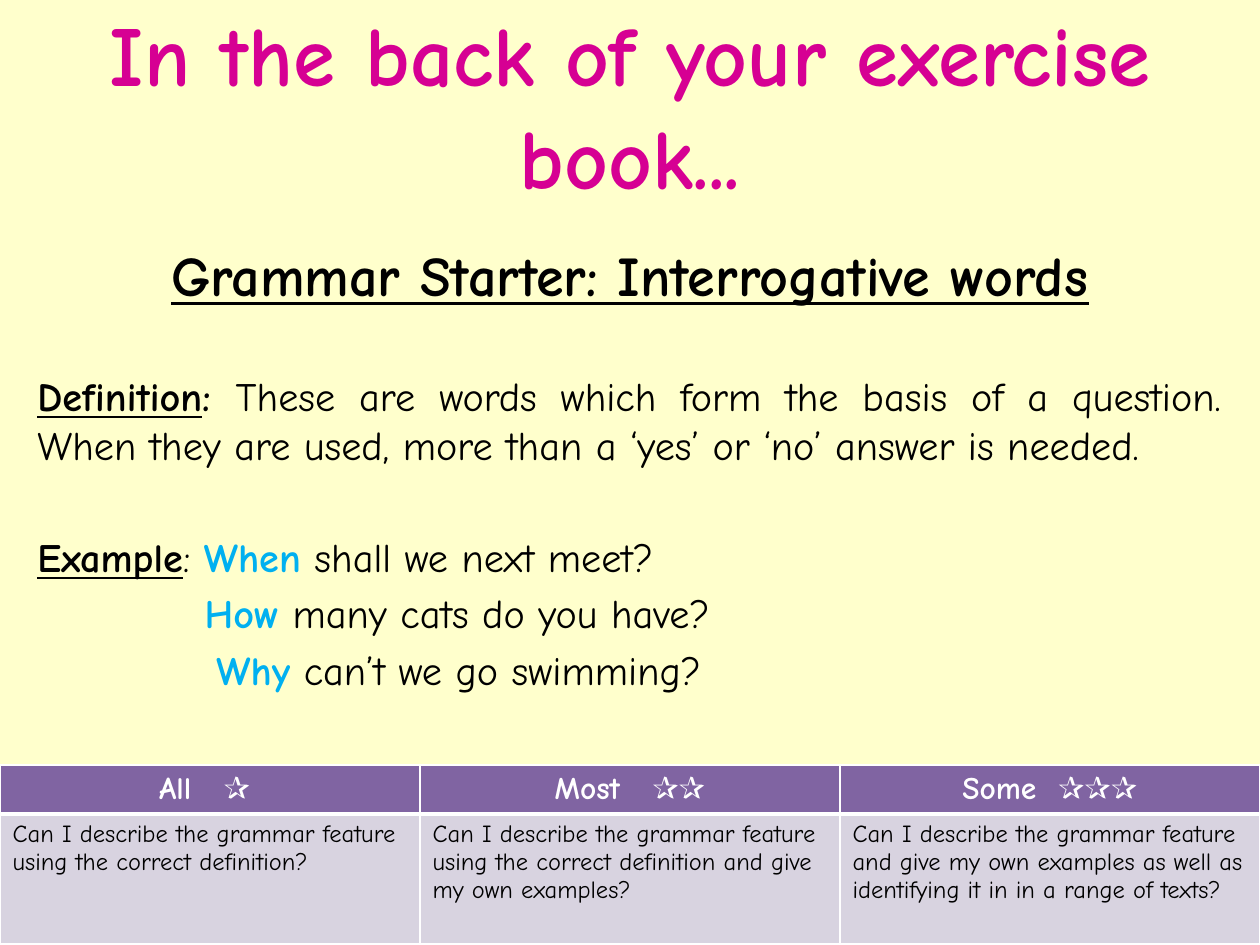
from pptx import Presentation, util as u
from pptx.dml.color import RGBColor
from pptx.enum import text
from pptx.oxml import parse_xml
from pptx.oxml.ns import nsdecls

ALIGN = text.PP_ALIGN


def colour(value):
    """Turn a hex string into a colour."""
    return RGBColor.from_string(value)


def write(paragraph, words, font="Comic Neue", size=23, fill="000000", bold=False, underline=False, spacing=None):
    """Add a formatted run to a paragraph."""
    run = paragraph.add_run()
    run.text = words
    run.font.name = font
    run.font.size = u.Pt(size)
    run.font.color.rgb = colour(fill)
    run.font.bold = bold
    run.font.underline = underline
    if spacing:
        run.font._element.set("spc", str(round(spacing * 100)))


def border(cell, side, width):
    """Draw a white line along one side of a cell."""
    line = parse_xml(
        f'<a:ln{side} {nsdecls("a")} w="{u.Pt(width)}"><a:solidFill>'
        f'<a:srgbClr val="FFFFFF"/></a:solidFill></a:ln{side}>')
    cell._tc.get_or_add_tcPr().append(line)


class LessonSlide:
    """Hold the lesson style and the current slide."""

    paper, pink, blue = "FFFFCC", "D60093", "00B0F0"
    header_fill, goal_fill = "8064A2", "D8D3E0"

    def __init__(self, presentation):
        """Add a slide with the paper background."""
        self.slide = presentation.slides.add_slide(presentation.slide_layouts[1])
        self.slide.background.fill.solid()
        self.slide.background.fill.fore_color.rgb = colour(self.paper)

    def place(self, shape, left, top, width, height):
        """Position a placeholder and return its text frame."""
        shape.left, shape.top = u.Cm(left), u.Cm(top)
        shape.width, shape.height = u.Cm(width), u.Cm(height)
        frame = shape.text_frame
        frame.word_wrap = True
        frame.auto_size = text.MSO_AUTO_SIZE.NONE
        return frame

    def title(self, words, *place):
        """Fill the title placeholder."""
        paragraph = self.place(self.slide.shapes.title, *place).paragraphs[0]
        paragraph.alignment = ALIGN.CENTER
        write(paragraph, words, size=48.6, fill=self.pink, bold=True)

    def body(self, entries, *place):
        """Fill the body placeholder with unbulleted paragraphs."""
        frame = self.place(self.slide.placeholders[1], *place)
        for number, (align, indent, before, runs) in enumerate(entries):
            paragraph = frame.add_paragraph() if number else frame.paragraphs[0]
            paragraph.alignment = align
            if before:
                paragraph.space_before = u.Pt(before)
            properties = paragraph._p.get_or_add_pPr()
            properties.set("marL", str(u.Cm(indent)))
            properties.set("indent", "0")
            properties.append(parse_xml(f'<a:buNone {nsdecls("a")}/>'))
            for words, style in runs:
                write(paragraph, words, **style)

    def cell(self, cell, fill, bottom):
        """Style a table cell and return its paragraph."""
        for side, width in (("L", 1), ("R", 1), ("T", 1), ("B", bottom)):
            border(cell, side, width)
        cell.fill.solid()
        cell.fill.fore_color.rgb = colour(fill)
        return cell.text_frame.paragraphs[0]

    def goals(self, columns, left, top, width, heights):
        """Add the table of graded goals."""
        table = self.slide.shapes.add_table(
            2, len(columns), u.Cm(left), u.Cm(top), u.Cm(width), u.Cm(sum(heights))).table
        for row, height in zip(table.rows, heights):
            row.height = u.Cm(height)
        for index, (level, gap, margin, goal) in enumerate(columns):
            heading = self.cell(table.cell(0, index), self.header_fill, 3)
            heading.alignment = ALIGN.CENTER
            heading._p.get_or_add_pPr().set("marR", str(u.Cm(margin)))
            style = dict(size=18, fill="FFFFFF", bold=True)
            write(heading, level, **style)
            write(heading, " ", spacing=gap, **style)
            write(heading, "✰" * (index + 1), **style)
            write(self.cell(table.cell(1, index), self.goal_fill, 1), goal, size=14)


def main():
    """Build the grammar starter slide."""
    presentation = Presentation()
    presentation.slide_width, presentation.slide_height = u.Cm(25.4), u.Cm(19.05)
    lesson = LessonSlide(presentation)
    lesson.title("In the back of your exercise book...", 0, 0.05, 25.4, 4.09)

    strong = dict(bold=True)
    label = dict(bold=True, underline=True)
    question = dict(bold=True, fill=lesson.blue)
    section_gap = 36.6
    lesson.body([
        (ALIGN.CENTER, 0, None, [("Grammar Starter: Interrogative words", dict(label, size=32))]),
        (ALIGN.JUSTIFY, 0, section_gap, [
            ("Definition", label), (": ", strong),
            ("These are words which form the basis of a question. "
             "When they are used, more than a ‘yes’ or ‘no’ answer is needed.", {})]),
        (ALIGN.JUSTIFY, 0, section_gap, [
            ("Example", label), (": ", {}), ("When", question), (" shall we next meet?", {})]),
        (ALIGN.JUSTIFY, 3.37, None, [("How", question), (" many cats do you have?", {})]),
        (ALIGN.JUSTIFY, 3.61, None, [("Why", question), (" can’t we go swimming?", {})]),
    ], 0.5, 4.72, 24.4, 12.29)

    lesson.goals([
        ("All", 12, 0.22, "Can I describe the grammar feature using the correct definition?"),
        ("Most", 12, 0, "Can I describe the grammar feature using the correct definition "
                        "and give my own examples?"),
        ("Some", 6, 0, "Can I describe the grammar feature and give my own examples "
                       "as well as identifying it in in a range of texts?"),
    ], 0, 15.42, 25.4, (0.84, 2.62))
    presentation.save("out.pptx")


if __name__ == "__main__":
    main()
